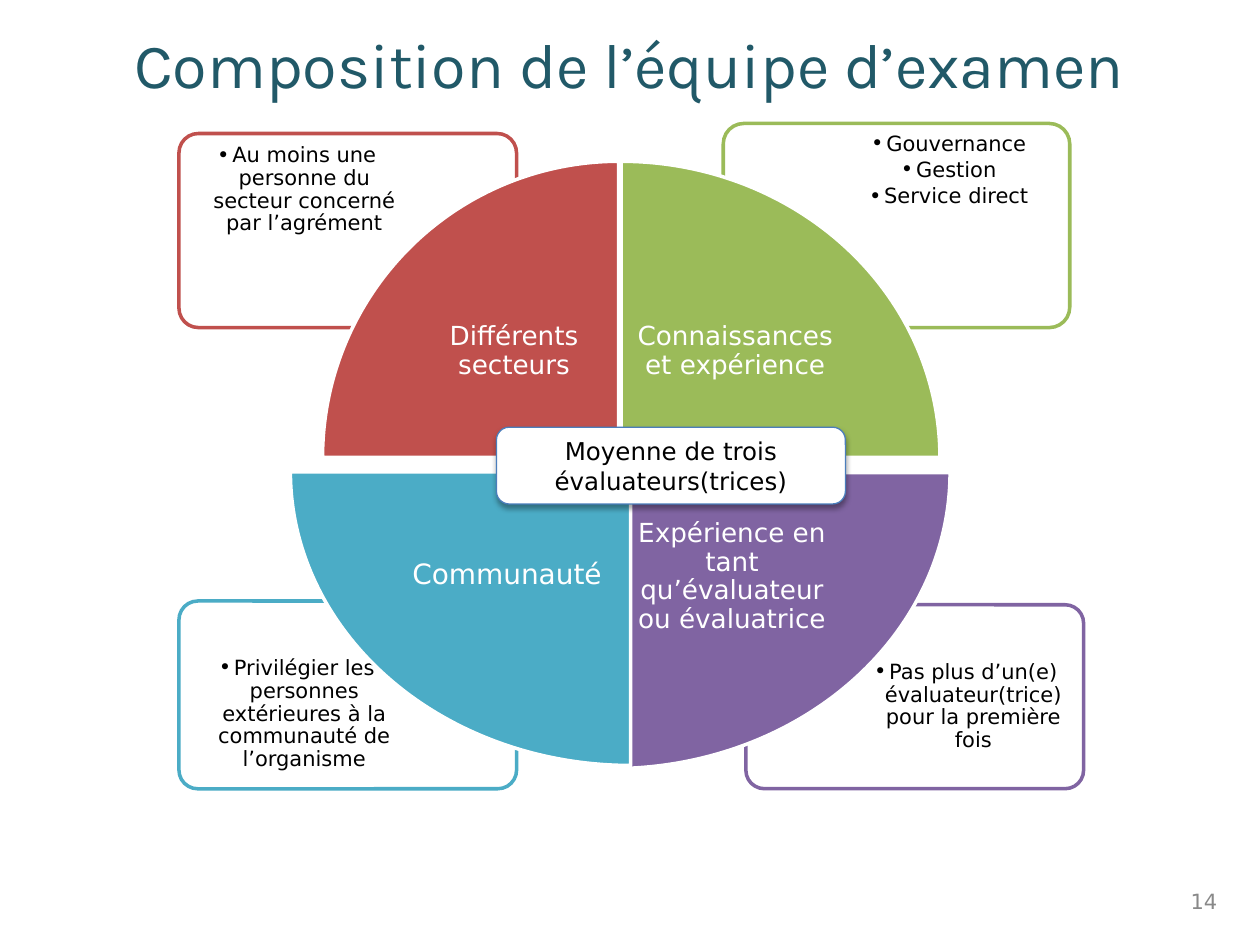
from lxml import etree
from pptx import Presentation
from pptx import util as u
from pptx.dml.color import RGBColor
from pptx.enum import shapes, text
from pptx.oxml.ns import qn

WHITE = RGBColor(0xFF, 0xFF, 0xFF)
BLACK = RGBColor(0x00, 0x00, 0x00)
GREY = RGBColor(0x89, 0x89, 0x89)
DARK_TEAL = RGBColor(0x21, 0x59, 0x68)
BLUE = RGBColor(0x4B, 0x7E, 0xBC)
RED = RGBColor(0xC0, 0x50, 0x4D)
GREEN = RGBColor(0x9B, 0xBB, 0x59)
PURPLE = RGBColor(0x80, 0x64, 0xA2)
TEAL = RGBColor(0x4B, 0xAC, 0xC6)

BODY_FONT = "DejaVu Sans"
CENTER, RIGHT = text.PP_ALIGN.CENTER, text.PP_ALIGN.RIGHT
TOP, MIDDLE = text.MSO_ANCHOR.TOP, text.MSO_ANCHOR.MIDDLE
DEFAULT_INSETS = (0.1, 0.05, 0.1, 0.05)
WEDGE_INSETS = (0.1, 0.12, 0.1, 0.12)

# colour, panel place, text place, bullet items
PANELS = [
    (PURPLE, (5.92, 4.8, 2.68, 1.46), (6.76, 5.2, 1.81, 1.03),
     ["Pas plus d’un(e) évaluateur(trice) pour la première fois"]),
    (TEAL, (1.42, 4.77, 2.68, 1.49), (1.45, 5.17, 1.81, 1.05),
     ["Privilégier les personnes extérieures à la communauté de l’organisme"]),
    (GREEN, (5.74, 0.98, 2.75, 1.62), (6.6, 1.01, 1.86, 1.14),
     ["Gouvernance", "Gestion", "Service direct"]),
    (RED, (1.42, 1.06, 2.68, 1.54), (1.45, 1.1, 1.81, 1.09),
     ["Au moins une personne du secteur concerné par l’agrément"]),
]

# colour, rotation, wedge place, label place, label, size, insets
WEDGES = [
    (RED, 0, (2.56, 1.28, 2.35, 2.35), (3.25, 1.96, 1.66, 1.66),
     "Différents secteurs", 15, WEDGE_INSETS),
    (GREEN, 90, (5.02, 1.19, 2.35, 2.53), (4.94, 1.96, 1.79, 1.66),
     "Connaissances et expérience", 15, WEDGE_INSETS),
    (PURPLE, 180, (4.86, 3.75, 2.68, 2.35), (4.86, 3.75, 1.9, 1.66),
     "Expérience en tant qu’évaluateur ou évaluatrice", 15, WEDGE_INSETS),
    (TEAL, 270, (2.49, 3.56, 2.33, 2.7), (3.09, 3.75, 1.91, 1.64),
     "Communauté", 16, (0.08, 0.12, 0.12, 0.12)),
]


def inches(values):
    return [u.Inches(value) for value in values]


def add_bullet(para):
    properties = para._p.get_or_add_pPr()
    properties.set("marL", str(u.Inches(0.12)))
    properties.set("indent", str(u.Inches(-0.12)))
    etree.SubElement(properties, qn("a:buFont")).set("typeface", BODY_FONT)
    etree.SubElement(properties, qn("a:buChar")).set("char", "•")


def write(shape, lines, size, color, font=BODY_FONT, align=CENTER, anchor=MIDDLE,
          insets=DEFAULT_INSETS, bullets=False, **spacing):
    """Fill a shape with one paragraph per line; spacing holds paragraph formats."""
    frame = shape.text_frame
    left, top, right, bottom = inches(insets)
    frame_format = {"word_wrap": True, "vertical_anchor": anchor,
                    "margin_left": left, "margin_top": top,
                    "margin_right": right, "margin_bottom": bottom}
    for name, value in frame_format.items():
        setattr(frame, name, value)
    for index, line in enumerate(lines):
        para = frame.add_paragraph() if index else frame.paragraphs[0]
        for name, value in {"alignment": align, **spacing}.items():
            setattr(para, name, value)
        if bullets:
            add_bullet(para)
        span = para.add_run()
        span.text = line
        for name, value in {"size": u.Pt(size), "name": font}.items():
            setattr(span.font, name, value)
        span.font.color.rgb = color


def add_text(page, place, lines, size, color, **formats):
    box = page.shapes.add_textbox(*inches(place))
    write(box, lines, size, color, **formats)


def add_outlined(page, kind, place, fill, line, width=2):
    shape = page.shapes.add_shape(kind, *inches(place))
    shape.shadow.inherit = False
    shape.fill.solid()
    shape.fill.fore_color.rgb = fill
    shape.line.color.rgb = line
    shape.line.width = u.Pt(width)
    return shape


def add_panel(page, color, place, text_place, items):
    panel = add_outlined(page, shapes.MSO_SHAPE.ROUNDED_RECTANGLE, place, WHITE, color)
    panel.adjustments[0] = 0.1
    fill_color = panel._element.spPr.find(qn("a:solidFill"))[0]
    etree.SubElement(fill_color, qn("a:alpha")).set("val", "90000")
    add_text(page, text_place, items, 12, BLACK, anchor=TOP, insets=(0.05,) * 4,
             bullets=True, line_spacing=0.9, space_after=u.Pt(2))


def add_wedge(page, color, rotation, place, label_place, label, size, insets):
    wedge = add_outlined(page, shapes.MSO_SHAPE.PIE_WEDGE, place, color, WHITE)
    wedge.rotation = rotation
    add_text(page, label_place, [label], size, WHITE, insets=insets,
             line_spacing=0.9, space_after=u.Pt(5))


def add_drop_shadow(shape):
    effects = shape._element.spPr.find(qn("a:effectLst"))
    shadow = etree.SubElement(effects, qn("a:outerShdw"), blurRad=str(u.Pt(3.1)),
                              dist=str(u.Pt(1.8)), dir="5400000", rotWithShape="0")
    color = etree.SubElement(shadow, qn("a:srgbClr"), val="000000")
    etree.SubElement(color, qn("a:alpha"), val="35000")


def add_hub(page):
    hub = add_outlined(page, shapes.MSO_SHAPE.ROUNDED_RECTANGLE,
                       (3.94, 3.39, 2.77, 0.61), WHITE, BLUE, 0.75)
    add_drop_shadow(hub)
    write(hub, ["Moyenne de trois évaluateurs(trices)"], 14, BLACK)


def main():
    deck = Presentation()
    deck.slide_width, deck.slide_height = inches((10, 7.5))
    page = deck.slides.add_slide(deck.slide_layouts[6])
    add_text(page, (0.87, 0.02, 8.25, 0.96), ["Composition de l’équipe d’examen"],
             36, DARK_TEAL, font="Karla")
    for panel in PANELS:
        add_panel(page, *panel)
    for wedge in WEDGES:
        add_wedge(page, *wedge)
    add_text(page, (9.23, 6.95, 0.53, 0.4), ["14"], 12, GREY, align=RIGHT)
    add_hub(page)
    deck.save("out.pptx")


if __name__ == "__main__":
    main()
